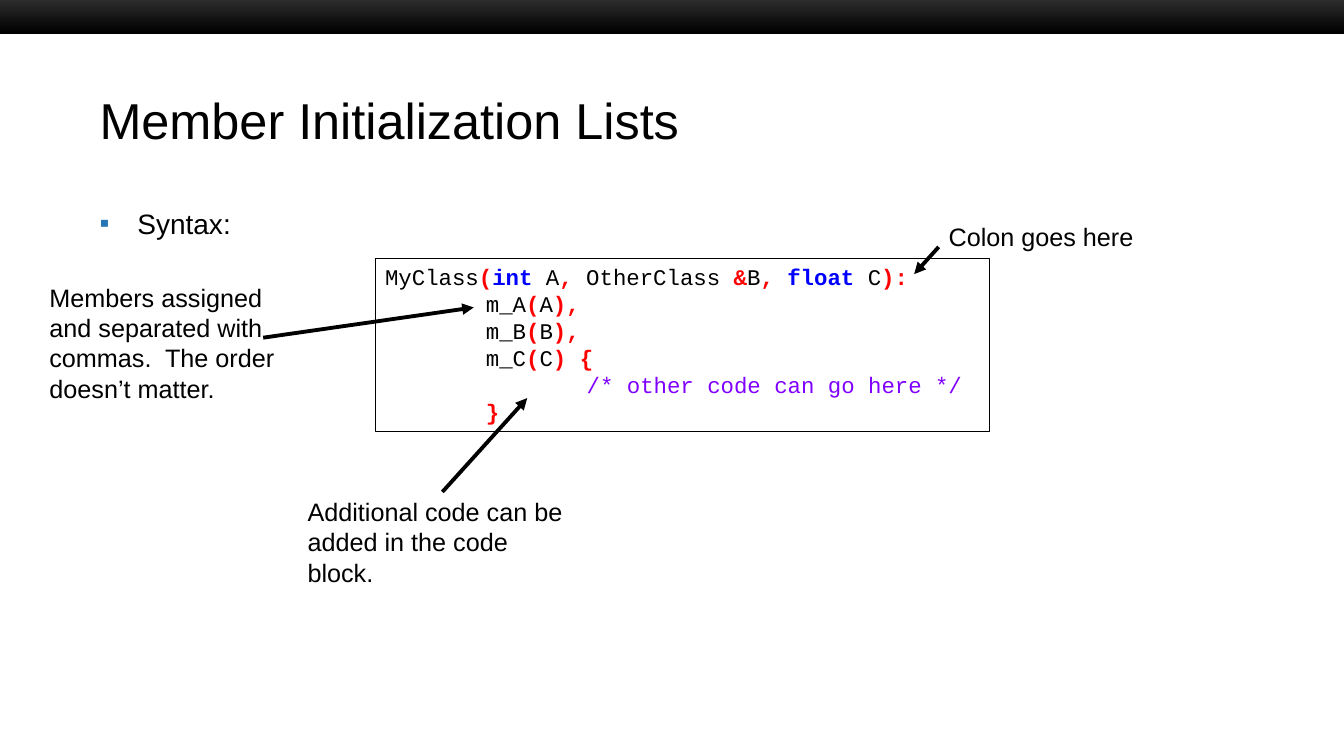
from lxml.etree import SubElement
from pptx import Presentation
from pptx.dml.color import RGBColor
from pptx.enum.shapes import MSO_CONNECTOR as Connector, MSO_SHAPE as Shape
from pptx.enum.text import MSO_ANCHOR as Anchor, PP_ALIGN as Align
from pptx.oxml.ns import qn
from pptx.util import Pt

COLORS = {
    "text": "000000",
    "bar_top": "333333",
    "bullet": "2675B4",
    "symbol": "FF0000",
    "keyword": "0000FF",
    "comment": "8000FF",
}
BOLD_KINDS = ("symbol", "keyword")

BAR = (0, -3.6, 960, 27.6)
TITLE = ("Member Initialization Lists", (64, 58.2, 832.5, 54), 36)
SYNTAX = ("Syntax:", (64, 144, 408, 306), 20)
BULLET_INDENT = 27
CODE_BOX = (268, 184.6, 439, 123.8)
CODE_SIZE = 16
CODE_TAB = 72
CODE = [
    [("MyClass", "text"), ("(", "symbol"), ("int", "keyword"), (" A", "text"),
     (",", "symbol"), (" OtherClass ", "text"), ("&", "symbol"), ("B", "text"),
     (",", "symbol"), (" ", "text"), ("float", "keyword"), (" C", "text"),
     ("):", "symbol")],
    [("\tm_A", "text"), ("(", "symbol"), ("A", "text"), ("),", "symbol")],
    [("\tm_B", "text"), ("(", "symbol"), ("B", "text"), ("),", "symbol")],
    [("\tm_C", "text"), ("(", "symbol"), ("C", "text"), (")", "symbol"),
     (" ", "text"), ("{", "symbol")],
    [("\t\t", "text"), ("/* other code can go here */", "comment")],
    [("\t", "text"), ("}", "symbol")],
]
NOTE_SIZE = 18
NOTES = [
    ("Colon goes here", (670.5, 154.8, 162.7, 43.2),
     (670.5, 176.4, 653, 195.8)),
    ("Members assigned and separated with commas.  The order doesn’t matter.",
     (28.2, 198, 195, 98), (188, 241.2, 338.4, 219.6)),
    ("Additional code can be added in the code block.",
     (212.6, 351, 206.6, 78.5), (316, 351.4, 376.6, 284.4)),
]


def points(values):
    return [Pt(value) for value in values]


def color(name):
    return RGBColor.from_string(COLORS[name])


def set_font(font, size, name="Arial"):
    font.name = name
    font.size = Pt(size)
    font.color.rgb = color("text")


def add_bullet(paragraph):
    properties = paragraph._p.get_or_add_pPr()
    properties.set("marL", str(Pt(BULLET_INDENT)))
    properties.set("indent", str(-Pt(BULLET_INDENT)))
    bullet_color = SubElement(properties, qn("a:buClr"))
    SubElement(bullet_color, qn("a:srgbClr"), val=COLORS["bullet"])
    SubElement(properties, qn("a:buFont"), typeface="Arial")
    SubElement(properties, qn("a:buChar"), char="▪")


def add_tabs(paragraph):
    tabs = SubElement(paragraph._p.get_or_add_pPr(), qn("a:tabLst"))
    for count in (1, 2):
        SubElement(tabs, qn("a:tab"), pos=str(Pt(count * CODE_TAB)), algn="l")


def add_text(slide, text, box, size, anchor=Anchor.TOP, bullet=False):
    frame = slide.shapes.add_textbox(*points(box)).text_frame
    frame.word_wrap = True
    frame.vertical_anchor = anchor
    paragraph = frame.paragraphs[0]
    paragraph.text = text
    if bullet:
        add_bullet(paragraph)
    set_font(paragraph.font, size)


def add_bar(slide):
    bar = slide.shapes.add_shape(Shape.RECTANGLE, *points(BAR))
    bar.shadow.inherit = False
    bar.line.fill.background()
    bar.fill.gradient()
    bar.fill.gradient_angle = 270
    for stop, name in zip(bar.fill.gradient_stops, ("bar_top", "text")):
        stop.color.rgb = color(name)


def add_code(slide):
    shape = slide.shapes.add_shape(Shape.RECTANGLE, *points(CODE_BOX))
    shape.shadow.inherit = False
    shape.fill.background()
    shape.line.color.rgb = color("text")
    shape.line.width = Pt(0.75)
    frame = shape.text_frame
    frame.word_wrap = True
    frame.vertical_anchor = Anchor.TOP
    for index, tokens in enumerate(CODE):
        paragraph = frame.add_paragraph() if index else frame.paragraphs[0]
        paragraph.alignment = Align.LEFT
        add_tabs(paragraph)
        set_font(paragraph.font, CODE_SIZE, "Courier New")
        for text, kind in tokens:
            run = paragraph.add_run()
            run.text = text
            run.font.color.rgb = color(kind)
            run.font.bold = kind in BOLD_KINDS


def add_arrow(slide, ends):
    arrow = slide.shapes.add_connector(Connector.STRAIGHT, *points(ends))
    arrow.line.color.rgb = color("text")
    arrow.line.width = Pt(2.75)
    SubElement(arrow.line._get_or_add_ln(), qn("a:tailEnd"), type="triangle")
    SubElement(arrow._element.spPr, qn("a:effectLst"))


def main():
    presentation = Presentation()
    presentation.slide_width, presentation.slide_height = Pt(960), Pt(540)
    slide = presentation.slides.add_slide(presentation.slide_layouts[6])
    add_bar(slide)
    add_text(slide, *TITLE, anchor=Anchor.MIDDLE)
    add_text(slide, *SYNTAX, bullet=True)
    add_code(slide)
    for text, box, arrow in NOTES:
        add_text(slide, text, box, NOTE_SIZE)
        add_arrow(slide, arrow)
    presentation.save("out.pptx")


if __name__ == "__main__":
    main()
